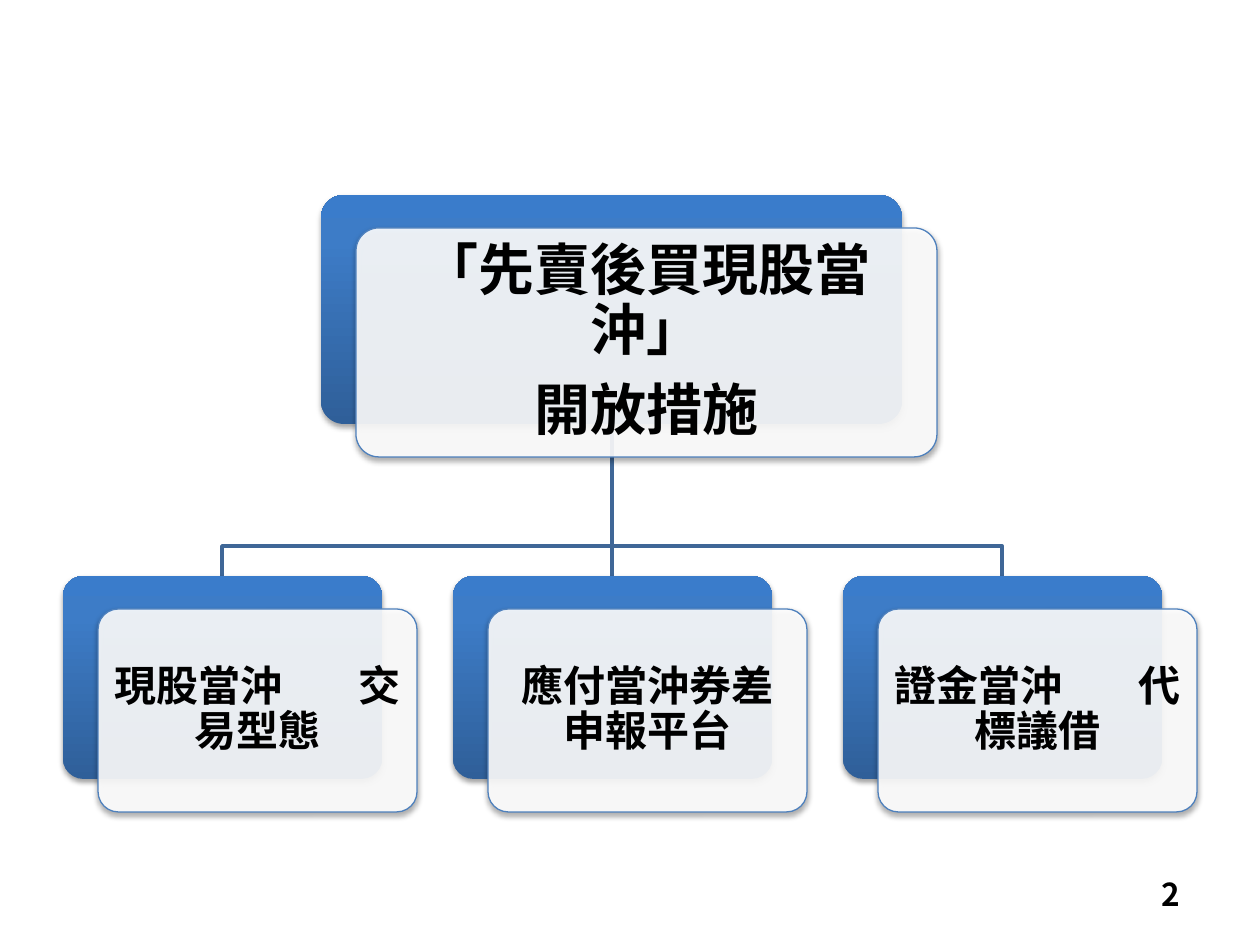
from pptx import Presentation
from pptx.dml.color import RGBColor
from pptx.enum.shapes import MSO_CONNECTOR, MSO_SHAPE
from pptx.enum.text import MSO_ANCHOR, PP_ALIGN
from pptx.oxml import parse_xml
from pptx.oxml.ns import nsdecls
from pptx.util import Pt

PX = 914400 / 126
FONT = "Noto Sans CJK SC"
COLORS = {
    "connector": "3F6797", "edge": "4F81BD", "card": "FFFFFF", "text": "000000",
    "deep": "2F5F99", "middle": "3D7CC7", "bright": "3A7CCB", "shadow": "000000",
}
OFFSET_X, OFFSET_Y = 35, 33
ROOT = (321, 195, 581, 229)
CHILD_LEFT, CHILD_TOP, CHILD_WIDTH, CHILD_HEIGHT = 63, 576, 319, 203
CHILD_STEP = 390
BRANCH_Y = 546
WIDE_GAP = 38  # points added to the single space inside a label
CHILD_LABELS = [
    ["現股當沖", " ", "交易型態"],
    ["應付當沖券差申報平台"],
    ["證金當沖", " ", "代標議借"],
]


def emu(*lengths):
    return [round(length * PX) for length in lengths]


def color(name):
    return RGBColor.from_string(COLORS[name])


def style_line(line, name, width):
    line.color.rgb = color(name)
    line.width = Pt(width)


def add_shadow(shape, opacity):
    shape.shadow.inherit = False
    effects = shape._element.spPr.find(
        "{http://schemas.openxmlformats.org/drawingml/2006/main}effectLst")
    effects.append(parse_xml(
        f'<a:outerShdw {nsdecls("a")} blurRad="40000" dist="23000" dir="5400000" '
        f'rotWithShape="0"><a:srgbClr val="{COLORS["shadow"]}">'
        f'<a:alpha val="{opacity * 1000}"/></a:srgbClr></a:outerShdw>'))


def add_panel(page, left, top, width, height):
    panel = page.shapes.add_shape(
        MSO_SHAPE.ROUNDED_RECTANGLE, *emu(left, top, width, height))
    panel.adjustments[0] = 0.1
    return panel


def add_back_panel(page, frame, opacity):
    panel = add_panel(page, *frame)
    stops = "".join(
        f'<a:gs pos="{place * 1000}"><a:srgbClr val="{COLORS[name]}"/></a:gs>'
        for place, name in [(0, "deep"), (80, "middle"), (100, "bright")])
    panel._element.spPr.insert(2, parse_xml(
        f'<a:gradFill {nsdecls("a")} rotWithShape="1"><a:gsLst>{stops}</a:gsLst>'
        '<a:lin ang="16200000" scaled="0"/></a:gradFill>'))
    panel.line.fill.background()
    add_shadow(panel, opacity)


def add_front_panel(page, frame):
    panel = add_panel(page, *frame)
    panel.fill.solid()
    panel.fill.fore_color.rgb = color("card")
    panel.fill._xPr.solidFill[0].append(
        parse_xml(f'<a:alpha {nsdecls("a")} val="90000"/>'))
    style_line(panel.line, "edge", 0.75)
    add_shadow(panel, 35)


def add_text(page, frame, paragraphs, size, align, inset=None, spaced=False):
    """Each paragraph is a list of run texts; a lone space becomes a wide gap."""
    box = page.shapes.add_textbox(*emu(*frame))
    body = box.text_frame
    body.word_wrap = True
    body.vertical_anchor = MSO_ANCHOR.MIDDLE
    if inset is not None:
        margin, = emu(inset)
        body.margin_left = body.margin_right = margin
        body.margin_top = body.margin_bottom = margin
    for index, texts in enumerate(paragraphs):
        para = body.add_paragraph() if index else body.paragraphs[0]
        para.alignment = align
        if spaced:
            para.line_spacing = 0.9
            para.space_after = Pt(round(size * 0.35))
        for text in texts:
            span = para.add_run()
            span.text = text
            span.font.name = FONT
            span.font.size = Pt(size)
            span.font.bold = True
            span.font.color.rgb = color("text")
            properties = span._r.get_or_add_rPr()
            if text == " ":
                properties.set("spc", str(WIDE_GAP * 100))
            properties.find(
                "{http://schemas.openxmlformats.org/drawingml/2006/main}latin"
            ).addnext(parse_xml(f'<a:ea {nsdecls("a")} typeface="{FONT}"/>'))


def add_card(page, frame, paragraphs, size, inset, opacity):
    left, top, width, height = frame
    front = (left + OFFSET_X, top + OFFSET_Y, width, height)
    add_back_panel(page, frame, opacity)
    add_front_panel(page, front)
    add_text(page, front, paragraphs, size, PP_ALIGN.CENTER, inset, spaced=True)


def add_branch(page, start, end):
    """Joins two points straight down, or with an elbow at the branch height."""
    (start_x, start_y), (end_x, end_y) = start, end
    if start_x == end_x:
        branch = page.shapes.add_connector(
            MSO_CONNECTOR.STRAIGHT, *emu(*start, *end))
        branch._element.spPr.append(parse_xml(f'<a:effectLst {nsdecls("a")}/>'))
    else:
        builder = page.shapes.build_freeform(start_x, start_y, scale=PX)
        builder.add_line_segments(
            [(start_x, BRANCH_Y), (end_x, BRANCH_Y), end], close=False)
        branch = builder.convert_to_shape()
        branch.fill.background()
        branch.shadow.inherit = False
    style_line(branch.line, "connector", 2)


def main():
    deck = Presentation()
    deck.slide_width, deck.slide_height = emu(1260, 945)
    page = deck.slides.add_slide(deck.slide_layouts[6])

    lefts = [CHILD_LEFT + CHILD_STEP * column for column in range(len(CHILD_LABELS))]
    centers = [left + CHILD_WIDTH // 2 for left in lefts]
    trunk = (centers[1], ROOT[1] + ROOT[3])
    for center in reversed(centers):
        add_branch(page, trunk, (center, CHILD_TOP))

    add_card(page, ROOT, [["「先賣後買現股當沖」"], ["開放措施"]], 32, 16, 35)
    for left, label in zip(lefts, CHILD_LABELS):
        frame = (left, CHILD_TOP, CHILD_WIDTH, CHILD_HEIGHT)
        add_card(page, frame, [label], 24, 13, 38)

    add_text(page, (898, 869, 294, 50), [["2"]], 18, PP_ALIGN.RIGHT)
    deck.save("out.pptx")


if __name__ == "__main__":
    main()
